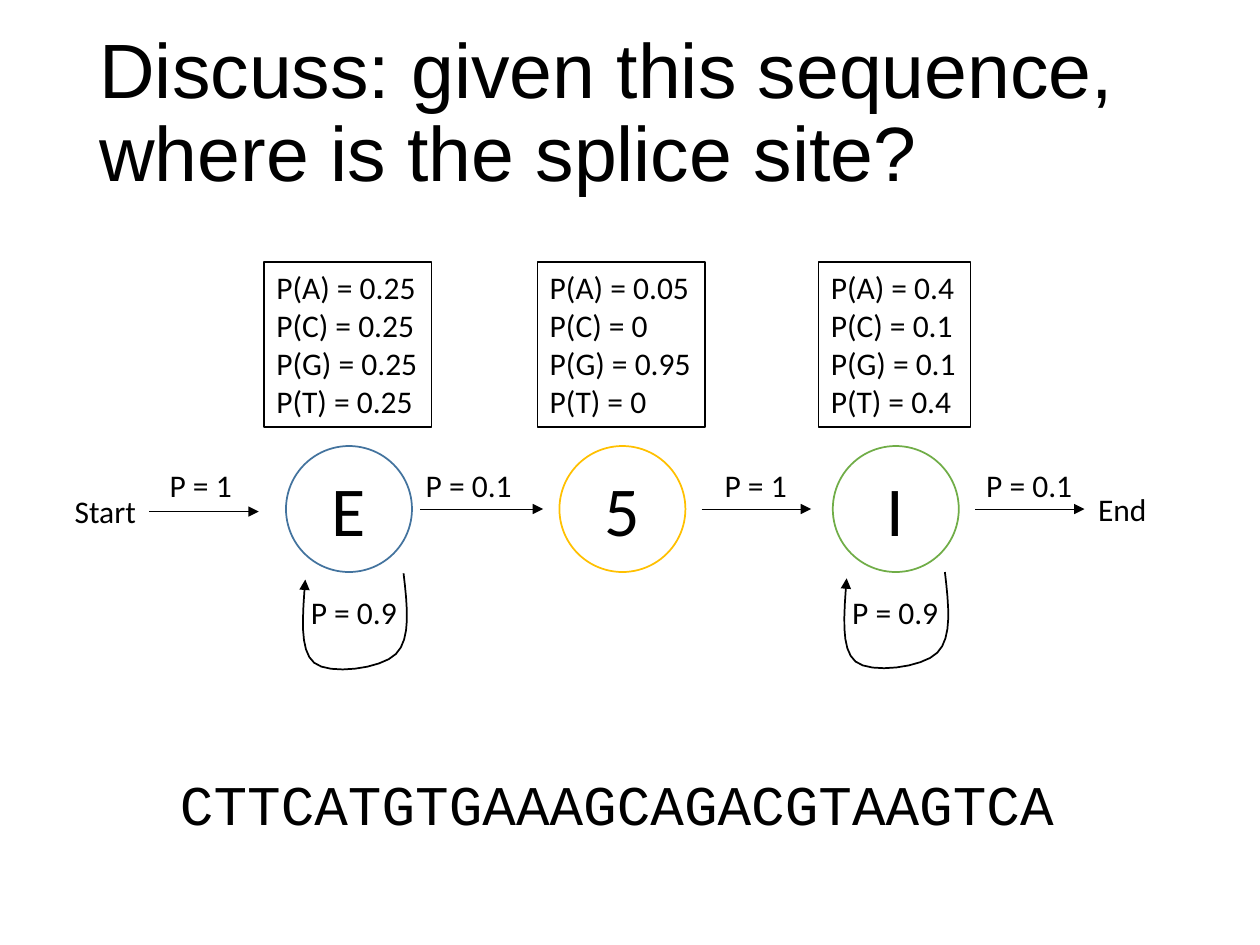
from lxml import etree
from pptx import Presentation
from pptx.dml.color import RGBColor
from pptx.enum.shapes import MSO_CONNECTOR, MSO_SHAPE
from pptx.enum.text import MSO_ANCHOR, MSO_AUTO_SIZE
from pptx.oxml.ns import qn
from pptx.util import Inches, Pt

ELLIPSE, STRAIGHT = MSO_SHAPE.OVAL, MSO_CONNECTOR.STRAIGHT
MIDDLE, FIT_TEXT = MSO_ANCHOR.MIDDLE, MSO_AUTO_SIZE.SHAPE_TO_FIT_TEXT

BLACK = RGBColor(0x00, 0x00, 0x00)
BLUE = RGBColor(0x43, 0x73, 0x9E)
GOLD = RGBColor(0xFF, 0xC0, 0x00)
GREEN = RGBColor(0x70, 0xAD, 0x47)

WIDTH, HEIGHT = 10, 7.5
DIAMETER = 1
LABEL_HEIGHT = 0.4
LABEL_ROW = -0.38
CURVE_STEPS = 8

# letter, colour, emission box width, probabilities of A, C, G and T
STATES = [
    ("E", BLUE, 1.33, ("0.25", "0.25", "0.25", "0.25")),
    ("5", GOLD, 1.33, ("0.05", "0", "0.95", "0")),
    ("I", GREEN, 1.21, ("0.4", "0.1", "0.1", "0.4")),
]
# from column, to column, row, label, label column, label width
TRANSITIONS = [
    (-0.73, -0.33, 0.04, "P = 1", -0.54, 0.7),
    (0.26, 0.71, 0, "P = 0.1", 0.44, 0.89),
    (1.29, 1.69, 0, "P = 1", 1.49, 0.7),
    (2.29, 2.69, 0, "P = 0.1", 2.49, 0.89),
]
# column and row of the loop's middle top
LOOPS = [(0.02, 0.02), (2, 0)]
# cubic curves around the loop's middle top, in inches
LOOP_START = (0.39, 0)
LOOP_CURVES = [
    ((0.42, 0.26), (0.45, 0.52), (0.33, 0.64)),
    ((0.21, 0.76), (-0.2, 0.81), (-0.32, 0.71)),
    ((-0.44, 0.61), (-0.41, 0.33), (-0.39, 0.05)),
]


def column(number):
    """Horizontal centre of a state column; states stand at 0, 1 and 2."""
    return 2.77 + 2.17 * number


def row(number):
    """Vertical position in circle radii from the line of states."""
    return 4.04 + DIAMETER / 2 * number


def centred(x, y, width, height):
    return [Inches(v) for v in (x - width / 2, y - height / 2, width, height)]


def add_text(slide, lines, x, y, width, height, size, font="Calibri", wrap=False):
    """Place left-aligned lines in a box centred on x, y."""
    box = slide.shapes.add_textbox(*centred(x, y, width, height))
    frame = box.text_frame
    frame.word_wrap = wrap
    if not wrap:
        frame.auto_size = FIT_TEXT
    for index, line in enumerate(lines):
        paragraph = frame.paragraphs[0] if index == 0 else frame.add_paragraph()
        run = paragraph.add_run()
        run.text = line
        run.font.size = Pt(size)
        run.font.name = font
        run.font.color.rgb = BLACK
    return box


def set_line(shape, colour, points):
    shape.line.color.rgb = colour
    shape.line.width = Pt(points)


def add_arrowhead(shape):
    etree.SubElement(shape.line._get_or_add_ln(), qn("a:tailEnd"), type="triangle")


def add_state(slide, number, letter, colour, box_width, probabilities):
    x = column(number)
    circle = slide.shapes.add_shape(ELLIPSE, *centred(x, row(0), DIAMETER, DIAMETER))
    circle.shadow.inherit = False
    circle.fill.background()
    set_line(circle, colour, 1)
    add_text(slide, [letter], x, row(0), 0.34 if letter == "I" else 0.48, 0.77, 40)
    emissions = [f"P({base}) = {p}" for base, p in zip("ACGT", probabilities)]
    set_line(add_text(slide, emissions, x - 0.01, row(-2.61), box_width, 1.31, 18), BLACK, 0.75)


def add_transition(slide, start, end, level, label, label_column, label_width):
    y = Inches(row(level))
    arrow = slide.shapes.add_connector(
        STRAIGHT, Inches(column(start)), y, Inches(column(end)), y)
    set_line(arrow, BLACK, 0.5)
    add_arrowhead(arrow)
    etree.SubElement(arrow._element.spPr, qn("a:effectLst"))
    add_text(slide, [label], column(label_column), row(LABEL_ROW),
             label_width, LABEL_HEIGHT, 18)


def curve_points(start, curves):
    """Points along a chain of cubic Bezier curves."""
    points = [start]
    for controls in curves:
        anchors = (points[-1], *controls)
        for step in range(1, CURVE_STEPS + 1):
            t = step / CURVE_STEPS
            weights = ((1 - t) ** 3, 3 * t * (1 - t) ** 2, 3 * t * t * (1 - t), t ** 3)
            points.append(tuple(
                sum(w * anchor[axis] for w, anchor in zip(weights, anchors))
                for axis in (0, 1)))
    return points


def add_loop(slide, loop_column, drop):
    x, top = column(loop_column), row(1 + drop)
    points = [(Inches(x + dx), Inches(top + dy))
              for dx, dy in curve_points(LOOP_START, LOOP_CURVES)]
    builder = slide.shapes.build_freeform(*points[0])
    builder.add_line_segments(points[1:], close=False)
    loop = builder.convert_to_shape()
    loop.shadow.inherit = False
    loop.fill.background()
    set_line(loop, BLACK, 1)
    add_arrowhead(loop)
    add_text(slide, ["P = 0.9"], x, row(1.63), 0.89, LABEL_HEIGHT, 18)


def add_title(slide):
    title = add_text(slide, ["Discuss: given this sequence, where is the splice site?"],
                     WIDTH * 0.5, HEIGHT * 0.122, 8.62, 1.45, 44, "Arial", wrap=True)
    title.text_frame.vertical_anchor = MIDDLE
    title.text_frame.paragraphs[0].line_spacing = 0.9


def main():
    deck = Presentation()
    deck.slide_width, deck.slide_height = Inches(WIDTH), Inches(HEIGHT)
    slide = deck.slides.add_slide(deck.slide_layouts[6])
    add_title(slide)
    for number, state in enumerate(STATES):
        add_state(slide, number, *state)
    for transition in TRANSITIONS:
        add_transition(slide, *transition)
    for loop in LOOPS:
        add_loop(slide, *loop)
    add_text(slide, ["Start"], column(-0.89), row(0.04), 0.69, LABEL_HEIGHT, 18)
    add_text(slide, ["End"], column(2.83), row(0), 0.59, LABEL_HEIGHT, 18)
    add_text(slide, ["CTTCATGTGAAAGCAGACGTAAGTCA"], WIDTH * 0.494, HEIGHT * 0.85,
             7.22, 0.64, 32, "Courier New")
    deck.save("out.pptx")


if __name__ == "__main__":
    main()
